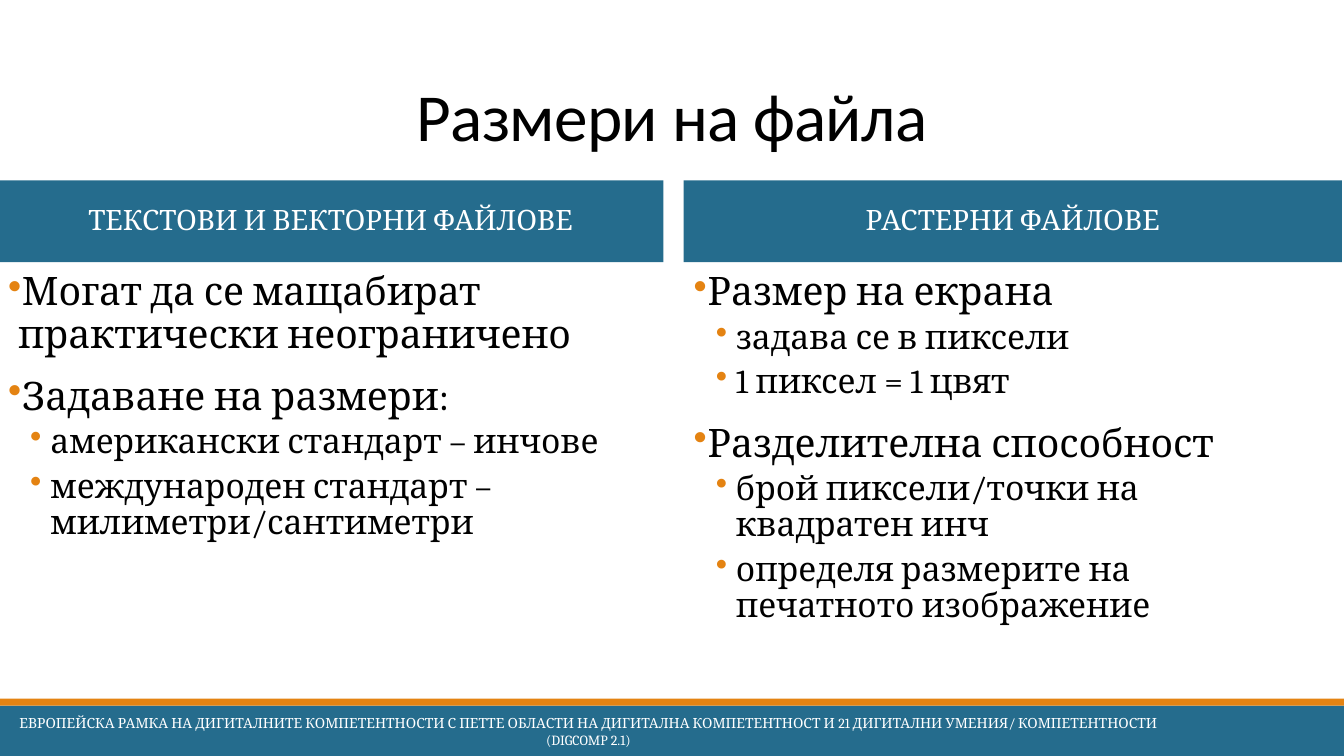
from lxml.etree import SubElement
from pptx import Presentation
from pptx.dml.color import RGBColor
from pptx.enum.shapes import MSO_SHAPE
from pptx.enum.text import MSO_ANCHOR, PP_ALIGN
from pptx.oxml.ns import qn
from pptx.util import Inches, Pt

HUES = {"blue": "256C8D", "gold": "E48312", "white": "FFFFFF", "black": "000000"}
MID = PP_ALIGN.CENTER
HEAD = {"alignment": MID, "line_spacing": 0.9, "space_before": Pt(12), "space_after": Pt(2)}
# Each level: text size, left indent, hanging indent, paragraph format
LEVELS = [
    (28, 0.1, -0.16, {"level": 0, "line_spacing": 0.9,
                      "space_before": Pt(12), "space_after": Pt(2)}),
    (24, 0.42, -0.2, {"level": 1, "line_spacing": 0.9,
                      "space_before": Pt(2), "space_after": Pt(4)}),
]
# Each topic: left edge of the band, left edge of the list, width, heading, items
TOPICS = [
    (-0.15, 0, 49.51, "ТЕКСТОВИ И ВЕКТОРНИ ФАЙЛОВЕ", [
        (0, "Могат да се мащабират практически неограничено"),
        (0, "Задаване на размери:"),
        (1, "американски стандарт – инчове"),
        (1, "международен стандарт – милиметри/сантиметри"),
    ]),
    (50.86, 51.01, 48.99, "РАСТЕРНИ ФАЙЛОВЕ", [
        (0, "Размер на екрана"),
        (1, "задава се в пиксели"),
        (1, "1 пиксел = 1 цвят"),
        (0, "Разделителна способност"),
        (1, "брой пиксели/точки на\nквадратен инч"),
        (1, "определя размерите на\nпечатното изображение"),
    ]),
]
FOOT = ("ЕВРОПЕЙСКА РАМКА НА ДИГИТАЛНИТЕ КОМПЕТЕНТНОСТИ С ПЕТТЕ ОБЛАСТИ НА ДИГИТАЛНА "
        "КОМПЕТЕНТНОСТ И 21 ДИГИТАЛНИ УМЕНИЯ/ КОМПЕТЕНТНОСТИ (DIGCOMP 2.1)")


def apply(item, form):
    for name, value in form.items():
        setattr(item, name, value)


class Deck:
    """Holds the style and the slide; places are percent of the slide's size."""

    def __init__(self):
        self.show = Presentation()
        self.show.slide_width, self.show.slide_height = Inches(13.33), Inches(7.5)
        self.slide = self.show.slides.add_slide(self.show.slide_layouts[6])

    def place(self, x, y, w, h):
        wide, high = self.show.slide_width, self.show.slide_height
        return [round(part * full / 100)
                for part, full in zip((x, y, w, h), (wide, high, wide, high))]

    def band(self, spot, hue):
        shape = self.slide.shapes.add_shape(MSO_SHAPE.RECTANGLE, *self.place(*spot))
        shape.shadow.inherit = False
        shape.fill.solid()
        shape.fill.fore_color.rgb = RGBColor.from_string(HUES[hue])
        shape.line.fill.background()
        return shape

    def box(self, spot):
        return self.slide.shapes.add_textbox(*self.place(*spot))

    def frame(self, shape, side, edge, anchor=MSO_ANCHOR.MIDDLE):
        apply(shape.text_frame, {
            "word_wrap": True, "vertical_anchor": anchor,
            "margin_left": Inches(side), "margin_right": Inches(side),
            "margin_top": Inches(edge), "margin_bottom": Inches(edge)})
        return shape.text_frame

    def label(self, para, text, size, hue, form, face="Cambria"):
        para.text = text
        apply(para, form)
        for run in para.runs:
            apply(run.font, {"size": Pt(size), "name": face})
            run.font.color.rgb = RGBColor.from_string(HUES[hue])

    def title(self, spot, text):
        para = self.frame(self.box(spot), 0.1, 0.05, MSO_ANCHOR.BOTTOM).paragraphs[0]
        self.label(para, text, 48, "black", {"alignment": MID, "line_spacing": 0.85}, "Calibri")
        para.runs[0].font._element.set("spc", "-50")

    def head(self, spot, text):
        frame = self.frame(self.band(spot, "blue"), 0.1, 0.08)
        self.label(frame.paragraphs[0], text, 20, "white", HEAD)

    def list(self, spot, items):
        frame = self.frame(self.box(spot), 0.08, 0.08, MSO_ANCHOR.TOP)
        for rank, (level, text) in enumerate(items):
            para = frame.add_paragraph() if rank else frame.paragraphs[0]
            size, left, hang, form = LEVELS[level]
            self.label(para, text, size, "black", form)
            self.mark(para, left, hang)

    def mark(self, para, left, hang):
        """Give the paragraph a gold bullet and its indents."""
        props = para._p.get_or_add_pPr()
        props.set("marL", str(Inches(left)))
        props.set("indent", str(Inches(hang)))
        tint = SubElement(props, qn("a:buClr"))
        SubElement(tint, qn("a:srgbClr"), val=HUES["gold"])
        SubElement(props, qn("a:buChar"), char="•")

    def foot(self, spot, text):
        frame = self.frame(self.box(spot), 0.04, 0.04)
        self.label(frame.paragraphs[0], text, 10, "white", {"alignment": MID})


def main():
    deck = Deck()
    deck.band((0, 93.33, 100, 6.67), "blue")
    deck.band((0, 92.4, 100, 0.93), "gold")
    deck.title((0, 0, 100, 21.2), "Размери на файла")
    for left, start, width, head, items in TOPICS:
        deck.head((left, 23.87, width, 10.8), head)
        deck.list((start, 34.93, width, 57.07), items)
    deck.foot((0, 94.13, 87.55, 5.33), FOOT)
    deck.show.save("out.pptx")


if __name__ == "__main__":
    main()
